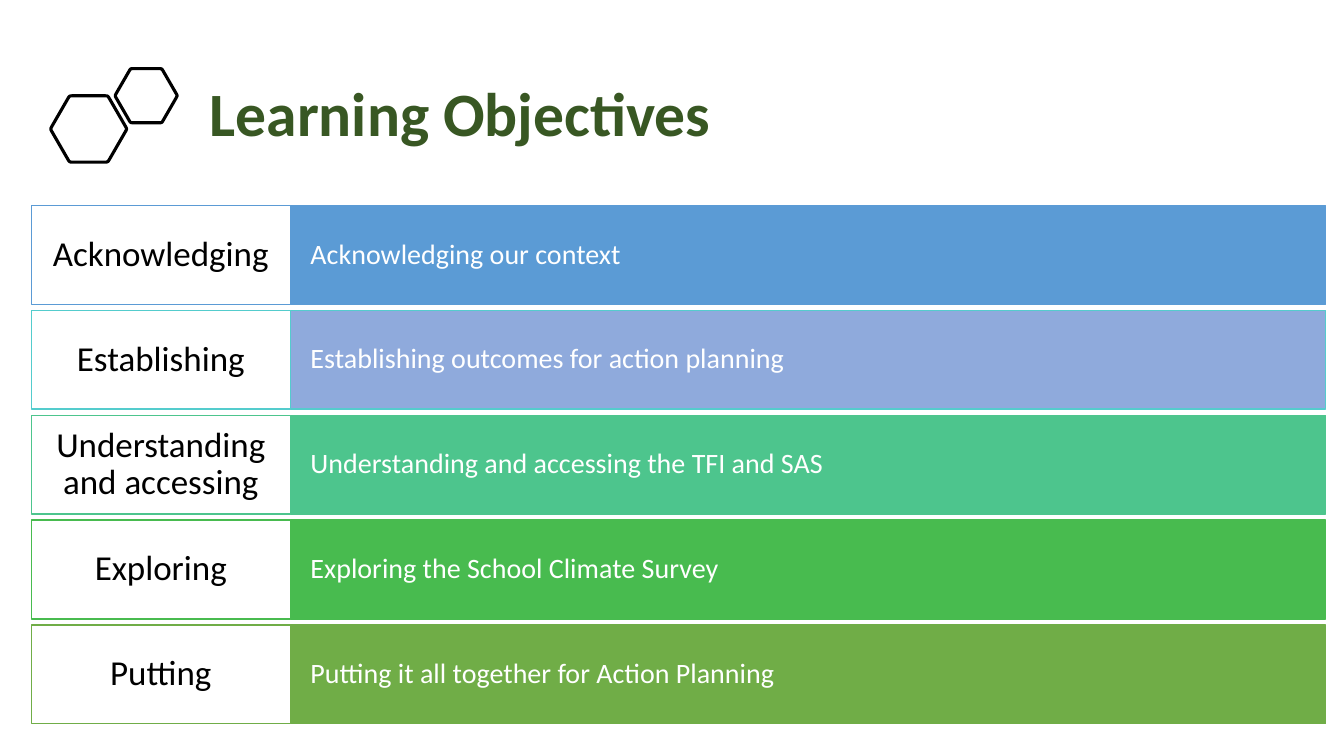
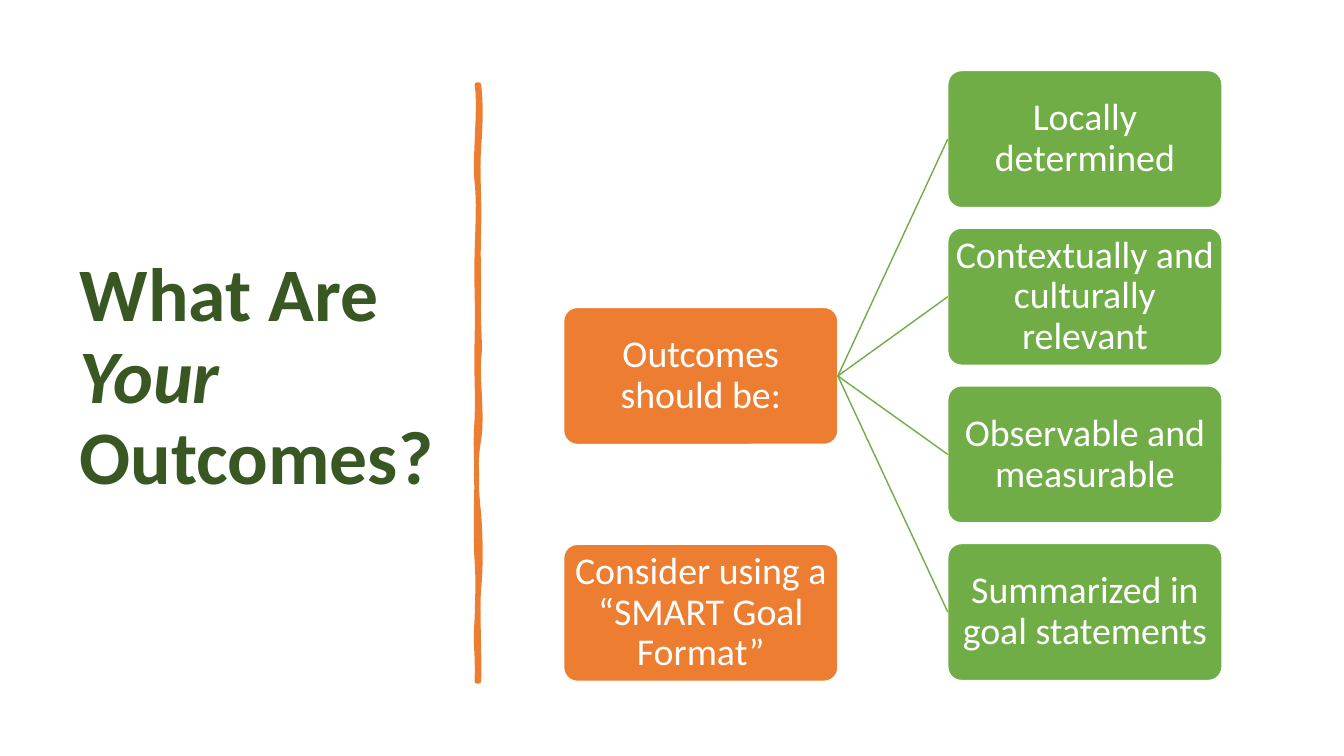
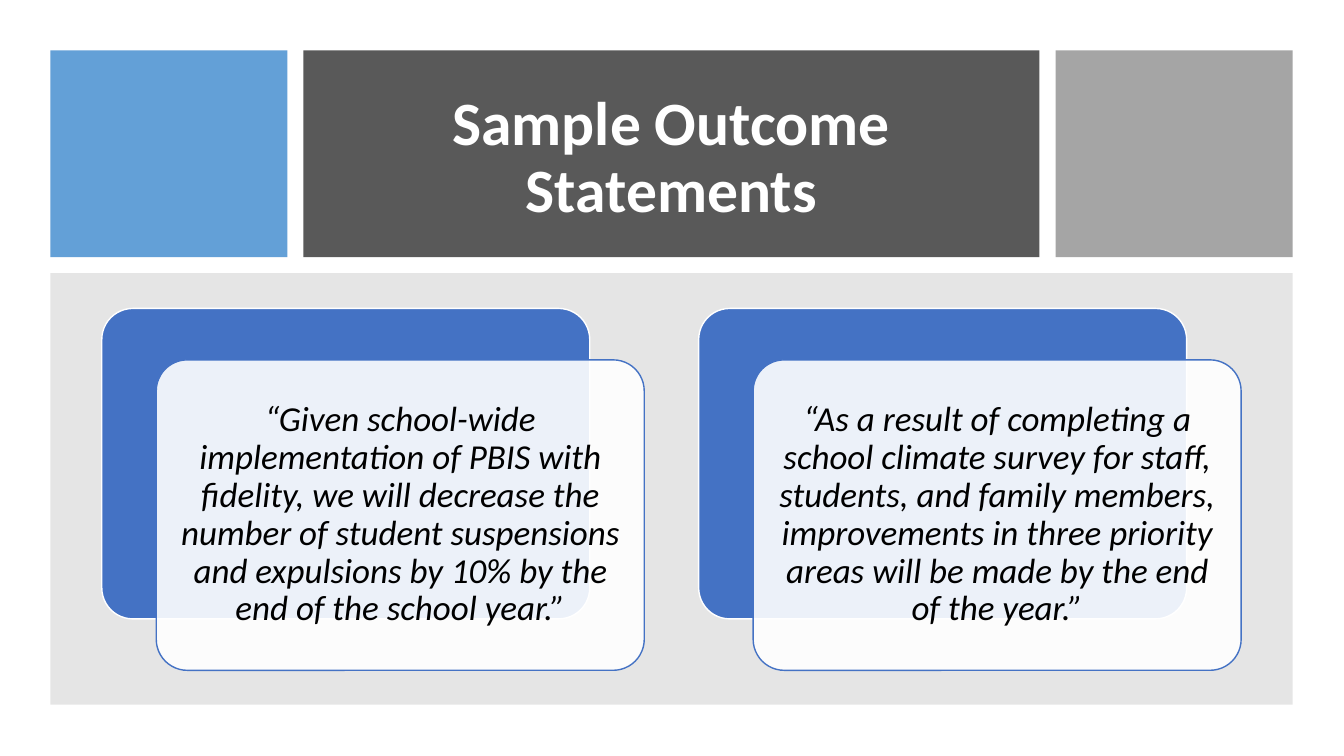
from math import cos, pi, sin

from lxml.etree import SubElement
from pptx import Presentation
from pptx.dml.color import RGBColor
from pptx.enum.shapes import MSO_CONNECTOR as CONNECTOR, MSO_SHAPE as SHAPE
from pptx.enum.text import MSO_ANCHOR as ANCHOR, MSO_AUTO_SIZE as AUTO_SIZE, PP_ALIGN as ALIGN
from pptx.oxml.ns import qn
from pptx.util import Emu, Pt

EMU_PER_PX = 9144
FONT = "Calibri"
BLACK, WHITE, DARK_GREEN = "000000", "FFFFFF", "385723"
ORANGE, GREEN, BLUE, SKY = "ED7D31", "70AD47", "4472C4", "5B9BD5"
CHARCOAL, SILVER, GRAY = "595959", "A5A5A5", "808080"
TOP, LEFT, BOTTOM, RIGHT = range(4)

OBJECTIVES = [
    ("Acknowledging", "Acknowledging our context", SKY, SKY),
    ("Establishing", "Establishing outcomes for action planning", "8FAADC", "54CCCD"),
    ("Understanding and accessing", "Understanding and accessing the TFI and SAS", "4DC58D", "4DC58D"),
    ("Exploring", "Exploring the School Climate Survey", "48BB4F", "48BB4F"),
    ("Putting", "Putting it all together for Action Planning", GREEN, GREEN),
]
QUALITIES = [
    "Locally determined",
    "Contextually and culturally relevant",
    "Observable and measurable",
    "Summarized in goal statements",
]
STATEMENTS = [
    "“Given school-wide implementation of PBIS with fidelity, we will decrease the number "
    "of student suspensions and expulsions by 10% by the end of the school year.”",
    "“As a result of completing a school climate survey for staff, students, and family "
    "members, improvements in three priority areas will be made by the end of the year.”",
]
BRUSH_START = (475, 84)
BRUSH_CURVES = [
    (477, 102, 477, 119, 475, 146), (473, 173, 476, 195, 475, 226),
    (474, 257, 475, 262, 475, 294), (474, 325, 477, 342, 475, 356),
    (473, 370, 479, 414, 475, 436), (471, 457, 472, 484, 475, 510),
    (477, 536, 477, 564, 475, 584), (473, 603, 476, 650, 475, 676),
    (474, 676, 473, 676, 473, 676), (474, 646, 471, 644, 473, 613),
    (474, 583, 474, 570, 473, 557), (472, 544, 472, 495, 473, 477),
    (473, 459, 471, 445, 473, 415), (474, 386, 472, 373, 473, 335),
    (474, 298, 472, 281, 473, 250), (474, 218, 475, 200, 473, 181),
    (470, 163, 477, 104, 473, 84),
]


def px(length):
    """Turn px into EMU."""
    return Emu(round(length * EMU_PER_PX))


def rgb(color):
    """Turn a hex string into a colour."""
    return RGBColor.from_string(color)


def paint(shape, fill=None, line=None, width=1, opacity=100):
    """Set fill, opacity and outline of a shape and drop its shadow."""
    shape.shadow.inherit = False
    if fill:
        shape.fill.solid()
        shape.fill.fore_color.rgb = rgb(fill)
        if opacity < 100:
            color = shape.element.spPr.find(qn("a:solidFill"))[0]
            SubElement(color, qn("a:alpha"), val=str(opacity * 1000))
    else:
        shape.fill.background()
    if line:
        shape.line.color.rgb = rgb(line)
        shape.line.width = Pt(width)
    else:
        shape.line.fill.background()


def write(shape, runs, size, color, align=ALIGN.CENTER, insets=(10, 5), bold=False):
    """Write (text, italic) runs into the one paragraph of a shape."""
    frame = shape.text_frame
    frame.word_wrap = True
    frame.auto_size = AUTO_SIZE.NONE
    frame.vertical_anchor = ANCHOR.MIDDLE
    frame.margin_left = frame.margin_right = px(insets[0])
    frame.margin_top = frame.margin_bottom = px(insets[1])
    paragraph = frame.paragraphs[0]
    paragraph.alignment = align
    paragraph.line_spacing = 0.9
    for text, italic in runs:
        run = paragraph.add_run()
        run.text = text
        run.font.name = FONT
        run.font.size = Pt(size)
        run.font.bold = bold
        run.font.italic = italic
        run.font.color.rgb = rgb(color)


def add_box(slide, box, fill, line=None, opacity=100, rounded=False):
    """Add a plain or rounded rectangle."""
    kind = SHAPE.ROUNDED_RECTANGLE if rounded else SHAPE.RECTANGLE
    shape = slide.shapes.add_shape(kind, *map(px, box))
    if rounded:
        shape.adjustments[0] = 0.1
    paint(shape, fill, line, opacity=opacity)
    return shape


def add_titled_slide(presentation, box, runs, size=44, color=DARK_GREEN, align=ALIGN.LEFT):
    """Add a title-only slide and format its title."""
    slide = presentation.slides.add_slide(presentation.slide_layouts[5])
    title = slide.shapes.title
    title.left, title.top, title.width, title.height = map(px, box)
    write(title, runs, size, color, align, bold=True)
    return slide


def curve_points(start, curve, steps=8):
    """Sample a cubic curve that leaves from start."""
    knots = [start, curve[0:2], curve[2:4], curve[4:6]]
    points = []
    for step in range(1, steps + 1):
        t = step / steps
        weights = ((1 - t) ** 3, 3 * t * (1 - t) ** 2, 3 * t * t * (1 - t), t ** 3)
        points.append(tuple(sum(w * knot[axis] for w, knot in zip(weights, knots)) for axis in (0, 1)))
    return points


def add_outline(slide, points, fill, line, width):
    """Add a closed freeform through points given in px."""
    first, *rest = [(px(x), px(y)) for x, y in points]
    builder = slide.shapes.build_freeform(*first, scale=1.0)
    builder.add_line_segments(rest, close=True)
    paint(builder.convert_to_shape(), fill, line, width)


def add_hexagon(slide, center_x, center_y, radius):
    """Add an open hexagon with softened corners."""
    corners = [(center_x + radius * cos(k * pi / 3), center_y + radius * sin(k * pi / 3)) for k in range(6)]
    points = []
    for k, corner in enumerate(corners):
        before, after = (
            tuple(0.9 * c + 0.1 * n for c, n in zip(corner, neighbor))
            for neighbor in (corners[k - 1], corners[(k + 1) % 6])
        )
        points += [before] + curve_points(before, corner + corner + after)
    add_outline(slide, points, None, BLACK, 2.25)


def add_brush_line(slide):
    """Add the hand-drawn vertical divider."""
    points = [BRUSH_START]
    for curve in BRUSH_CURVES:
        points += curve_points(points[-1], curve)
    add_outline(slide, points, ORANGE, ORANGE, 3.25)


def add_node(slide, left, top, text, fill):
    """Add a rounded diagram node."""
    node = add_box(slide, (left, top, 272, 136), fill, WHITE, rounded=True)
    write(node, [(text, False)], 27, WHITE, insets=(2, 2))
    return node


def join(slide, source, target):
    """Connect the right side of source with the left side of target."""
    connector = slide.shapes.add_connector(CONNECTOR.STRAIGHT, 0, 0, 0, 0)
    connector.begin_connect(source, RIGHT)
    connector.end_connect(target, LEFT)
    connector.line.color.rgb = rgb(GREEN)
    connector.line.width = Pt(1)
    SubElement(connector.element.spPr, qn("a:effectLst"))


def add_objective(slide, top, label, text, fill, line):
    """Add a row of a coloured bar and its label."""
    bar = add_box(slide, (288, top, 1027, 98), fill, line)
    write(bar, [(text, False)], 20, WHITE, ALIGN.LEFT, (20, 25))
    tag = add_box(slide, (31, top, 257, 98), WHITE, line)
    write(tag, [(label, False)], 25, BLACK, insets=(14, 10))


def add_statement(slide, left, text):
    """Add a quotation card over its offset backing."""
    add_box(slide, (left, 306, 484, 308), BLUE, WHITE, rounded=True)
    card = add_box(slide, (left + 54, 357, 484, 308), WHITE, BLUE, 90, rounded=True)
    write(card, [(text, True)], 25, BLACK, insets=(10, 10))


def build_objectives(presentation):
    """Build the slide of learning objectives."""
    slide = add_titled_slide(presentation, (198, 57, 1081, 117), [("Learning Objectives", False)])
    add_hexagon(slide, 88, 128, 38)
    add_hexagon(slide, 145, 95, 31)
    for row, objective in enumerate(OBJECTIVES):
        add_objective(slide, 204 + 104 * row, *objective)


def build_outcomes(presentation):
    """Build the slide on the qualities of outcomes."""
    runs = [("What Are ", False), ("Your ", True), ("Outcomes?", False)]
    slide = add_titled_slide(presentation, (69, 70, 374, 611), runs, 54)
    add_brush_line(slide)
    root = add_node(slide, 559, 305, "Outcomes should be:", ORANGE)
    for row, quality in enumerate(QUALITIES):
        join(slide, root, add_node(slide, 940, 70 + 1.15 * 136 * row, quality, GREEN))
    add_node(slide, 559, 540, "Consider using a “SMART Goal Format”", ORANGE)


def build_samples(presentation):
    """Build the slide of sample outcome statements."""
    runs = [("Sample Outcome Statements", False)]
    slide = add_titled_slide(presentation, (333, 80, 666, 156), runs, color=WHITE, align=ALIGN.CENTER)
    add_box(slide, (50, 50, 235, 205), SKY, opacity=95)
    title_band = add_box(slide, (301, 50, 730, 205), CHARCOAL)
    title_band.element.addnext(slide.shapes.title.element)
    add_box(slide, (1047, 50, 235, 205), SILVER)
    add_box(slide, (50, 271, 1232, 428), GRAY, opacity=20)
    for column, statement in enumerate(STATEMENTS):
        add_statement(slide, 101 + 592 * column, statement)


def main():
    """Build and save the presentation."""
    presentation = Presentation()
    presentation.slide_width, presentation.slide_height = px(1333), px(750)
    build_objectives(presentation)
    build_outcomes(presentation)
    build_samples(presentation)
    presentation.save("out.pptx")


if __name__ == "__main__":
    main()
